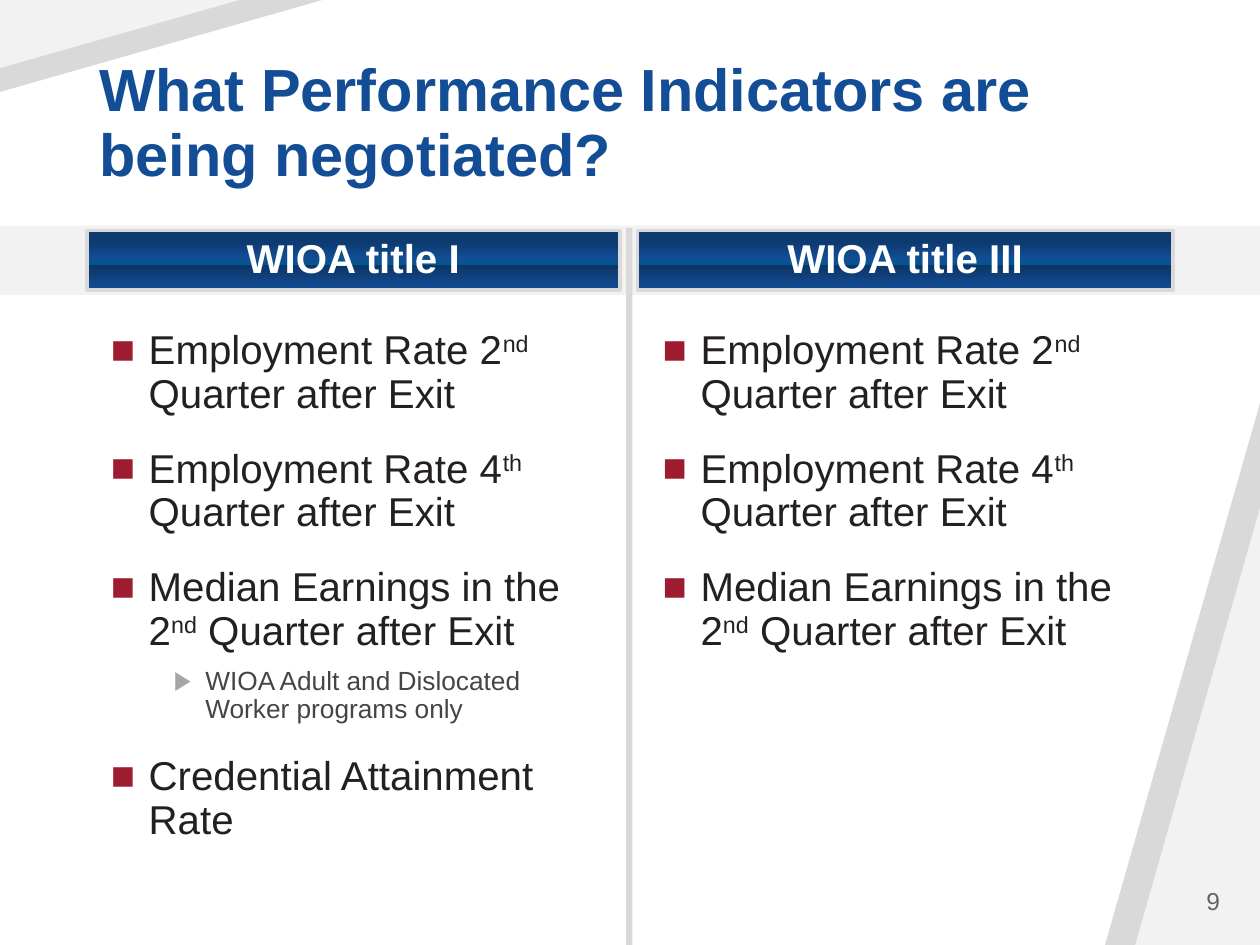
import copy
from dataclasses import dataclass

import pptx
import pptx.dml.color
import pptx.enum.shapes
import pptx.enum.text
import pptx.oxml.ns
import pptx.oxml.xmlchemy
import pptx.util
from lxml import etree

Inches = pptx.util.Inches
Pt = pptx.util.Pt
RGBColor = pptx.dml.color.RGBColor
qn = pptx.oxml.ns.qn
PresetShape = pptx.enum.shapes.MSO_SHAPE
Anchor = pptx.enum.text.MSO_ANCHOR
Align = pptx.enum.text.PP_ALIGN
AutoSize = pptx.enum.text.MSO_AUTO_SIZE

FONT = "Arial"
BLUE = RGBColor(0x12, 0x4D, 0x95)
WHITE = RGBColor(0xFF, 0xFF, 0xFF)
INK = RGBColor(0x24, 0x20, 0x21)
SUB_INK = RGBColor(0x45, 0x45, 0x45)
NUMBER_GRAY = RGBColor(0x64, 0x64, 0x64)
MID_GRAY = RGBColor(0xD9, 0xD9, 0xD9)
PALE_GRAY = RGBColor(0xF2, 0xF2, 0xF2)
CRIMSON = RGBColor(0x9E, 0x1C, 0x30)
ARROW_GRAY = RGBColor(0xA6, 0xA6, 0xA6)
HEADER_STOPS = [
    (0.19, RGBColor(0x0D, 0x3A, 0x70)),
    (0.47, BLUE),
    (0.58, RGBColor(0x00, 0x58, 0x8F)),
    (0.59, RGBColor(0x0D, 0x36, 0x68)),
    (1.0, BLUE),
]


@dataclass
class Level:
    bullet: str
    bullet_color: RGBColor
    size: int
    color: RGBColor
    margin: float
    hanging: float
    before: int


@dataclass
class Item:
    text: str  # "^" encloses superscript
    level: int = 0


@dataclass
class Column:
    heading: str
    left: float
    width: float
    list_left: float
    items: list[Item]
    heading_idx: int
    list_idx: int


LEVELS = [
    Level("■", CRIMSON, 23, INK, 0.3, 0.3, 18),
    Level("▶", ARROW_GRAY, 15, SUB_INK, 0.75, 0.25, 8),
]
SHARED = [
    Item("Employment Rate 2^nd^ Quarter after Exit"),
    Item("Employment Rate 4^th^ Quarter after Exit"),
    Item("Median Earnings in the 2^nd^ Quarter after Exit"),
]
TITLE_I_ONLY = [
    Item("WIOA Adult and Dislocated Worker programs only", 1),
    Item("Credential Attainment Rate"),
]
COLUMNS = [
    Column("WIOA title I", 0.69, 4.23, 0.78, SHARED + TITLE_I_ONLY, 1, 2),
    Column("WIOA title III", 5.06, 4.25, 5.16, SHARED, 3, 4),
]


def place(shape, left: float, top: float, width: float, height: float) -> None:
    shape.left, shape.top = Inches(left), Inches(top)
    shape.width, shape.height = Inches(width), Inches(height)


def style(run, size: int, color: RGBColor, bold: bool = False) -> None:
    run.font.name = FONT
    run.font.size = Pt(size)
    run.font.bold = bold
    run.font.color.rgb = color


def add_plain(slide, preset, left: float, top: float, width: float,
              height: float, color: RGBColor):
    shape = slide.shapes.add_shape(
        preset, Inches(left), Inches(top), Inches(width), Inches(height))
    shape.shadow.inherit = False
    shape.fill.solid()
    shape.fill.fore_color.rgb = color
    shape.line.fill.background()
    return shape


def add_corner(slide, left: float, top: float, width: float, height: float,
               rotation: int, color: RGBColor) -> None:
    """Quarter-turned right triangle that covers the given area."""
    shift = (width - height) / 2
    triangle = add_plain(slide, PresetShape.RIGHT_TRIANGLE, left + shift,
                         top - shift, height, width, color)
    triangle.rotation = rotation


def fill_gradient(shape) -> None:
    shape.fill.gradient()
    shape.fill.gradient_angle = 270
    stop_list = shape._element.spPr.find(qn("a:gradFill")).find(qn("a:gsLst"))
    while len(stop_list) < len(HEADER_STOPS):
        stop_list.append(copy.deepcopy(stop_list[0]))
    for stop, (position, color) in zip(shape.fill.gradient_stops, HEADER_STOPS):
        stop.position = position
        stop.color.rgb = color


def set_line(paragraph, text: str, size: int, color: RGBColor, align) -> None:
    paragraph.text = text
    paragraph.alignment = align
    paragraph.line_spacing = 0.9
    paragraph.space_before = Pt(0)
    style(paragraph.runs[0], size, color, bold=True)


def fill_heading(heading, column: Column) -> None:
    place(heading, column.left, 1.83, column.width, 0.47)
    fill_gradient(heading)
    heading.line.color.rgb = MID_GRAY
    heading.line.width = Pt(2)
    frame = heading.text_frame
    frame.auto_size = AutoSize.NONE
    frame.vertical_anchor = Anchor.MIDDLE
    frame.margin_left = frame.margin_right = Inches(0.05)
    frame.margin_top = frame.margin_bottom = Inches(0.06)
    set_line(frame.paragraphs[0], column.heading, 23, WHITE, Align.CENTER)


def fill_item(paragraph, item: Item, first: bool) -> None:
    level = LEVELS[item.level]
    paragraph.level = item.level
    properties = paragraph._p.get_or_add_pPr()
    properties.set("marL", str(Inches(level.margin)))
    properties.set("indent", str(-Inches(level.hanging)))
    bullet_color = etree.SubElement(properties, qn("a:buClr"))
    etree.SubElement(bullet_color, qn("a:srgbClr"), val=str(level.bullet_color))
    etree.SubElement(properties, qn("a:buFont"), typeface=FONT)
    etree.SubElement(properties, qn("a:buChar"), char=level.bullet)
    paragraph.line_spacing = 0.9
    paragraph.space_before = Pt(0 if first else level.before)
    for position, part in enumerate(item.text.split("^")):
        run = paragraph.add_run()
        run.text = part
        style(run, level.size, level.color)
        if position % 2:
            run.font._element.set("baseline", "30000")


def fill_list(body, column: Column) -> None:
    place(body, column.list_left, 2.57, 4.1, 4.2)
    frame = body.text_frame
    frame.auto_size = AutoSize.NONE
    frame.vertical_anchor = Anchor.TOP
    for number, item in enumerate(column.items):
        paragraph = frame.add_paragraph() if number else frame.paragraphs[0]
        fill_item(paragraph, item, first=number == 0)


def main() -> None:
    deck = pptx.Presentation()
    deck.slide_width, deck.slide_height = Inches(10), Inches(7.5)
    slide = deck.slides.add_slide(deck.slide_layouts.get_by_name("Comparison"))
    placeholders = list(slide.placeholders)

    # Background corners, band and divider
    add_corner(slide, 8.77, 3.2, 1.23, 4.3, 270, MID_GRAY)
    add_corner(slide, 9.01, 4.03, 0.99, 3.47, 270, PALE_GRAY)
    add_corner(slide, 0, 0, 2.56, 0.73, 90, MID_GRAY)
    add_corner(slide, 0, 0, 1.9, 0.54, 90, PALE_GRAY)
    add_plain(slide, PresetShape.RECTANGLE, 0, 1.79, 10, 0.55, PALE_GRAY)
    add_plain(slide, PresetShape.RECTANGLE, 4.97, 1.81, 0.05, 5.69, MID_GRAY)

    # Placeholders go in front of the background
    for placeholder in placeholders:
        slide.shapes._spTree.append(placeholder._element)

    # Title
    title = slide.shapes.title
    place(title, 0.69, 0.4, 8.62, 1.15)
    title.text_frame.auto_size = AutoSize.NONE
    title.text_frame.vertical_anchor = Anchor.BOTTOM
    set_line(title.text_frame.paragraphs[0],
             "What Performance Indicators are being negotiated?",
             34, BLUE, Align.LEFT)

    # Columns
    by_idx = {p.placeholder_format.idx: p for p in placeholders}
    for column in COLUMNS:
        fill_heading(by_idx[column.heading_idx], column)
        fill_list(by_idx[column.list_idx], column)

    # Page number
    page = slide.shapes.add_textbox(
        Inches(8.96), Inches(6.95), Inches(0.82), Inches(0.4)).text_frame
    page.word_wrap = True
    page.vertical_anchor = Anchor.MIDDLE
    page.text = "9"
    page.paragraphs[0].alignment = Align.RIGHT
    style(page.paragraphs[0].runs[0], 14, NUMBER_GRAY)

    deck.save("out.pptx")


if __name__ == "__main__":
    main()
